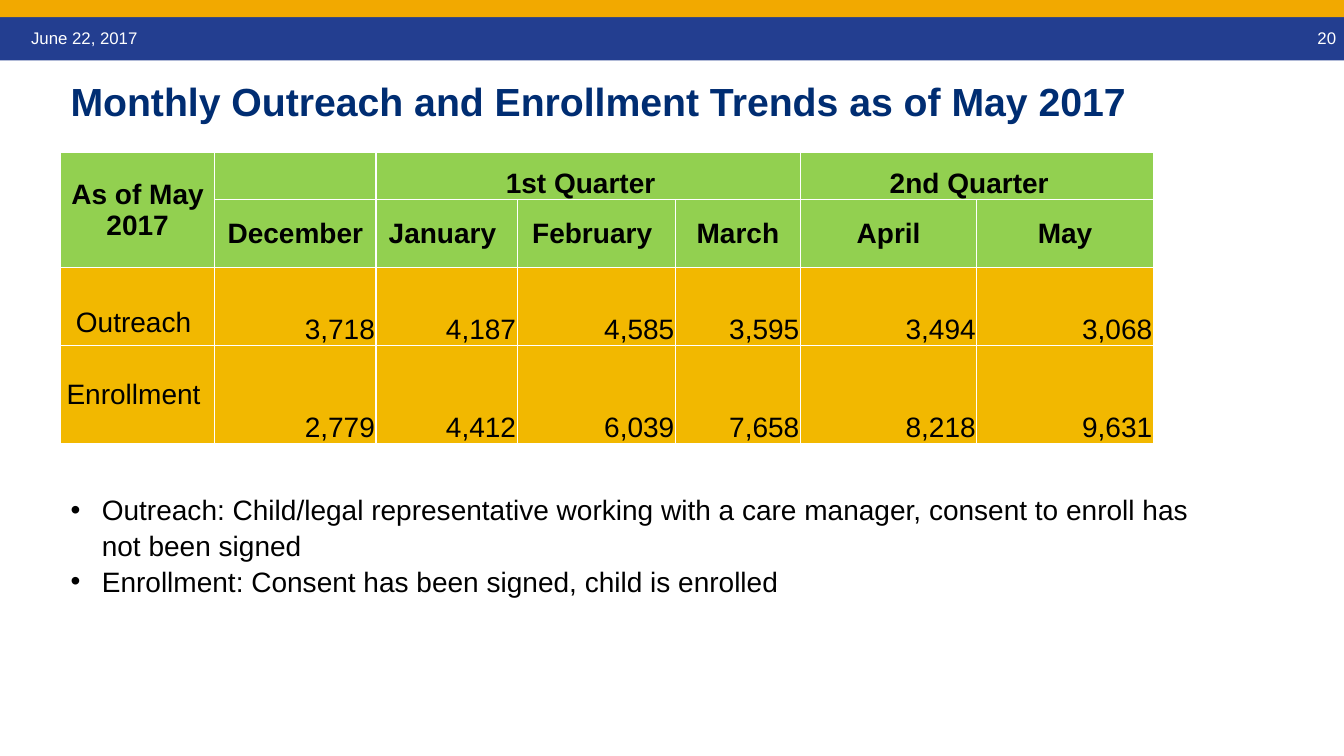
import pptx
import pptx.dml.color
import pptx.enum.shapes
import pptx.enum.text
import pptx.oxml
import pptx.oxml.ns
import pptx.util

Align = pptx.enum.text.PP_ALIGN
Anchor = pptx.enum.text.MSO_ANCHOR

SLIDE_WIDTH = pptx.util.Inches(13.33)
SLIDE_HEIGHT = pptx.util.Inches(7.5)
FONT = "Arial"
COLOURS = {
    "gold_band": "F2A900",
    "blue_band": "233E90",
    "title": "002D72",
    "header": "92D050",
    "figures": "F2B800",
    "black": "000000",
    "white": "FFFFFF",
}

# Column widths and row heights in percent of the slide.
COLUMN_SHARES = [11.48, 12, 10.5, 11.78, 9.3, 13.13, 13.13]
ROW_SHARES = [6.27, 6.27, 10.27, 12.93]
HEADER_ROWS = 2
MONTHS = ["December", "January", "February", "March", "April", "May"]
TRENDS = {
    "Outreach": ["3,718", "4,187", "4,585", "3,595", "3,494", "3,068"],
    "Enrollment": ["2,779", "4,412", "6,039", "7,658", "8,218", "9,631"],
}
DEFINITIONS = [
    "Outreach: Child/legal representative working with a care manager, "
    "consent to enroll has not been signed",
    "Enrollment: Consent has been signed, child is enrolled",
]


def across(percent):
    return round(SLIDE_WIDTH * percent / 100)


def down(percent):
    return round(SLIDE_HEIGHT * percent / 100)


def area(left, top, width, height):
    """Turn percentages of the slide into left, top, width and height."""
    return across(left), down(top), across(width), down(height)


def place(placeholder, box):
    placeholder.left, placeholder.top, placeholder.width, placeholder.height = box


def colour(name):
    return pptx.dml.color.RGBColor.from_string(COLOURS[name])


def paint(fill, name):
    fill.solid()
    fill.fore_color.rgb = colour(name)


def write(frame, *lines, size=20, ink="black", bold=False, align=Align.LEFT,
          spacing=None, bullet=None):
    """Fill a text frame with one formatted paragraph per line."""
    for index, line in enumerate(lines):
        paragraph = frame.add_paragraph() if index else frame.paragraphs[0]
        paragraph.text = line
        if bullet:
            add_bullet(paragraph, bullet)
        paragraph.alignment = align
        paragraph.space_before = pptx.util.Pt(0)
        if spacing:
            paragraph.line_spacing = spacing
        font = paragraph.font
        font.name, font.size, font.bold = FONT, pptx.util.Pt(size), bold
        font.color.rgb = colour(ink)


def add_bullet(paragraph, character):
    properties = paragraph._p.get_or_add_pPr()
    indent = pptx.util.Inches(0.31)
    properties.set("marL", str(indent))
    properties.set("indent", str(-indent))
    properties.append(pptx.oxml.parse_xml(
        f'<a:buChar {pptx.oxml.ns.nsdecls("a")} char="{character}"/>'))


def add_band(slide, box, name):
    band = slide.shapes.add_shape(pptx.enum.shapes.MSO_SHAPE.RECTANGLE, *box)
    band.shadow.inherit = False
    paint(band.fill, name)
    band.line.fill.background()


def add_label(slide, box, text, **style):
    frame = slide.shapes.add_textbox(*box).text_frame
    frame.word_wrap = True
    write(frame, text, **style)


def fill_placeholder(placeholder, box, *lines, **style):
    place(placeholder, box)
    frame = placeholder.text_frame
    frame.auto_size = pptx.enum.text.MSO_AUTO_SIZE.NONE
    frame.vertical_anchor = Anchor.TOP
    write(frame, *lines, **style)


def dress_cell(cell, fill_name):
    """Give a cell white one-point borders and a plain fill."""
    properties = cell._tc.get_or_add_tcPr()
    for side in ("lnL", "lnR", "lnT", "lnB"):
        properties.append(pptx.oxml.parse_xml(
            f'<a:{side} {pptx.oxml.ns.nsdecls("a")} w="{pptx.util.Pt(1)}">'
            f'<a:solidFill><a:srgbClr val="{COLOURS["white"]}"/></a:solidFill>'
            f'</a:{side}>'))
    paint(cell.fill, fill_name)


def write_cell(cell, text, anchor=Anchor.MIDDLE, top=0.01, right=0.01, **style):
    cell.margin_left, cell.margin_bottom = pptx.util.Inches(0.01), 0
    cell.margin_top = pptx.util.Inches(top)
    cell.margin_right = pptx.util.Inches(right)
    cell.vertical_anchor = anchor
    write(cell.text_frame, text, **style)


def add_trend_table(slide):
    box = area(4.5, 20.13, sum(COLUMN_SHARES), sum(ROW_SHARES))
    table = slide.shapes.add_table(len(ROW_SHARES), len(COLUMN_SHARES), *box).table
    table.first_row = table.horz_banding = False
    for column, share in zip(table.columns, COLUMN_SHARES):
        column.width = across(share)
    for number, (row, share) in enumerate(zip(table.rows, ROW_SHARES)):
        row.height = down(share)
        for cell in row.cells:
            dress_cell(cell, "header" if number < HEADER_ROWS else "figures")

    heading = {"bold": True, "align": Align.CENTER}
    table.cell(0, 0).merge(table.cell(1, 0))
    write_cell(table.cell(0, 0), "As of May 2017", **heading)
    for quarter, first, last in (("1st Quarter", 2, 4), ("2nd Quarter", 5, 6)):
        table.cell(0, first).merge(table.cell(0, last))
        write_cell(table.cell(0, first), quarter, Anchor.BOTTOM, right=0.16, **heading)
    for column, month in enumerate(MONTHS, 1):
        right = 0.09 if month in ("January", "February") else 0.01
        write_cell(table.cell(1, column), month, right=right, **heading)

    for row, (measure, counts) in enumerate(TRENDS.items(), HEADER_ROWS):
        top = 0.32 if measure == "Outreach" else 0.01
        write_cell(table.cell(row, 0), measure, top=top, right=0.09,
                   align=Align.CENTER)
        for column, count in enumerate(counts, 1):
            write_cell(table.cell(row, column), count, Anchor.BOTTOM,
                       align=Align.RIGHT)


def main():
    deck = pptx.Presentation()
    deck.slide_width, deck.slide_height = SLIDE_WIDTH, SLIDE_HEIGHT
    slide = deck.slides.add_slide(deck.slide_layouts.get_by_name("Title and Content"))
    title, definitions = slide.placeholders

    add_band(slide, area(0, 2.27, 100, 5.73), "blue_band")
    add_band(slide, area(0, 0, 100, 2.27), "gold_band")
    banner_text = {"size": 12, "ink": "white", "spacing": 0.9}
    add_label(slide, area(1.58, 3.33, 19.8, 4.67), "June 22, 2017", **banner_text)
    add_label(slide, area(84.4, 3.33, 15.75, 3.47), "20", align=Align.RIGHT,
              **banner_text)
    fill_placeholder(title, area(4.5, 10.27, 90.47, 7.47),
                     "Monthly Outreach and Enrollment Trends as of May 2017",
                     size=28, ink="title", bold=True, spacing=0.9)
    add_trend_table(slide)
    fill_placeholder(definitions, area(4.5, 64.27, 87.77, 14.8), *DEFINITIONS,
                     spacing=1.06, bullet="•")
    deck.save("out.pptx")


if __name__ == "__main__":
    main()
